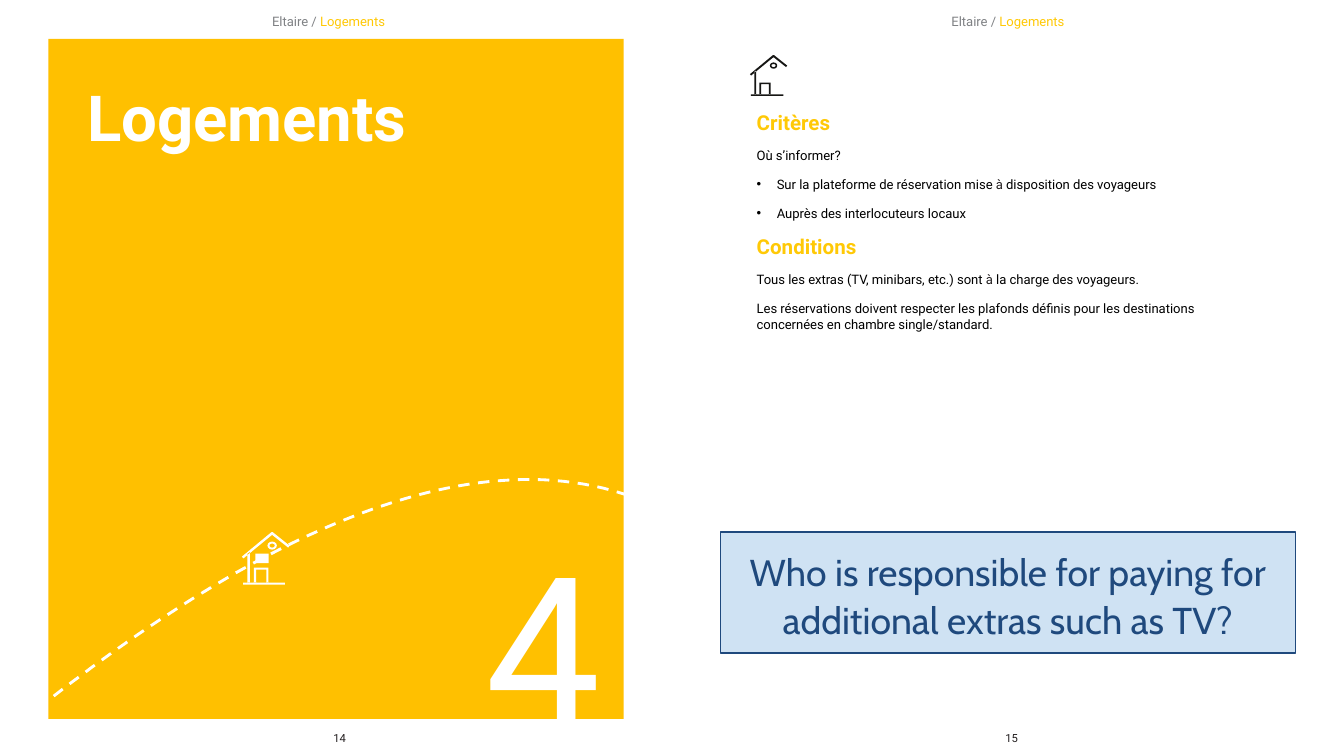
from lxml.etree import SubElement
from pptx import Presentation
from pptx.dml.color import RGBColor
from pptx.enum.dml import MSO_LINE
from pptx.enum.shapes import MSO_SHAPE
from pptx.enum.text import MSO_ANCHOR, MSO_AUTO_SIZE, PP_ALIGN
from pptx.oxml.ns import qn
from pptx.util import Inches, Pt

COLORS = {
    "yellow": "FFC000", "heading": "FFC906", "white": "FFFFFF", "black": "000000",
    "ink": "161614", "dark": "231F20", "gray": "808285", "pale_blue": "CFE2F3", "navy": "1F497D",
}
UNITS = 1000  # freeform units per inch


def write(box, *runs, size, font="Roboto", bold=False, align=PP_ALIGN.LEFT, before=0,
          line_spacing=1.0, margin=0, bullet=None, inset=(0, 0.01, 0, 0)):
    """Append one paragraph made of (text, color name) runs to a box."""
    frame = box.text_frame
    frame.word_wrap = True
    frame.auto_size = MSO_AUTO_SIZE.NONE
    frame.vertical_anchor = MSO_ANCHOR.TOP
    frame.margin_left, frame.margin_top, frame.margin_right, frame.margin_bottom = map(Inches, inset)
    para = frame.paragraphs[0]
    if para.runs:
        para = frame.add_paragraph()
    properties = para._p.get_or_add_pPr()
    properties.set("marL", str(Inches(margin)))
    properties.set("indent", str(-Inches(margin) if bullet else 0))
    if bullet:
        color = SubElement(properties, qn("a:buClr"))
        SubElement(color, qn("a:srgbClr"), val=COLORS["black"])
        SubElement(properties, qn("a:buChar"), char=bullet)
    else:
        SubElement(properties, qn("a:buNone"))
    para.alignment = align
    para.space_before = Pt(before)
    para.line_spacing = line_spacing
    for text, color in runs:
        span = para.add_run()
        span.text = text
        span.font.name = font
        span.font.size = Pt(size)
        span.font.bold = bold
        span.font.color.rgb = RGBColor.from_string(COLORS[color])


def draw_house(shapes, left, top, scale, color):
    """Draw a house icon, 0.36 by 0.39 inches at scale 1."""
    outlines = [
        [(10, 375), (320, 375), (320, 390), (10, 390)],  # ground
        [(42, 160), (60, 145), (60, 380), (42, 380)],  # wall
        [(90, 380), (90, 263), (198, 263), (198, 380), (182, 380), (182, 278), (107, 278), (107, 380)],  # door
        [(0, 182), (220, 0), (230, 0), (355, 100), (345, 115), (225, 20), (12, 195)],  # roof
    ]
    builder = None
    for outline in outlines:
        if builder is None:
            builder = shapes.build_freeform(*outline[0], scale=Inches(scale) / UNITS)
        else:
            builder.move_to(*outline[0])
        builder.add_line_segments(outline[1:], close=True)
    house = builder.convert_to_shape(Inches(left), Inches(top))
    window = shapes.add_shape(
        MSO_SHAPE.DONUT, Inches(left + 0.19 * scale), Inches(top + 0.07 * scale),
        Inches(0.07 * scale), Inches(0.06 * scale))
    for part in (house, window):
        part.shadow.inherit = False
        part.fill.solid()
        part.fill.fore_color.rgb = RGBColor.from_string(COLORS[color])
        part.line.fill.background()


deck = Presentation()
deck.slide_width, deck.slide_height = Inches(10), Inches(10 * 9 / 16)
page = deck.slides.add_slide(deck.slide_layouts[1])
shapes = page.shapes
title, body = shapes.title, page.placeholders[1]

# Chapter cover on the left
panel = shapes.add_shape(MSO_SHAPE.RECTANGLE, Inches(0.36), Inches(0.29), Inches(4.28), Inches(5.06))
panel.shadow.inherit = False
panel.fill.solid()
panel.fill.fore_color.rgb = RGBColor.from_string(COLORS["yellow"])
panel.line.fill.background()
title._element.addprevious(panel._element)

title.left, title.top, title.width, title.height = map(Inches, (0.64, 0.47, 3.25, 0.5))
write(title, ("Logements", "white"), size=34, bold=True, margin=0.01, inset=(0, 0.11, 0, 0))

number = shapes.add_textbox(Inches(3.6), Inches(3.85), Inches(0.88), Inches(1.57))
write(number, ("4", "white"), size=110, margin=0.01)

# Dashed route, sampled from a cubic curve
controls = [(0.4, 5.18), (1.8, 4.1), (3.6, 3.07), (5, 3.83)]
steps = 60
route_points = []
for step in range(steps + 1):
    t = step / steps
    weights = ((1 - t) ** 3, 3 * t * (1 - t) ** 2, 3 * t ** 2 * (1 - t), t ** 3)
    route_points.append(tuple(
        UNITS * sum(weight * point[axis] for weight, point in zip(weights, controls)) for axis in (0, 1)))
builder = shapes.build_freeform(*route_points[0], scale=Inches(1) / UNITS)
builder.add_line_segments(route_points[1:], close=False)
route = builder.convert_to_shape()
route.shadow.inherit = False
route.fill.background()
route.line.color.rgb = RGBColor.from_string(COLORS["white"])
route.line.width = Pt(1.52)
route.line.dash_style = MSO_LINE.DASH

# House icons, with a lit pane on the cover
pane = shapes.add_shape(MSO_SHAPE.RECTANGLE, Inches(1.9), Inches(4.12), Inches(0.1), Inches(0.07))
pane.shadow.inherit = False
pane.fill.solid()
pane.fill.fore_color.rgb = RGBColor.from_string(COLORS["white"])
pane.line.fill.background()
draw_house(shapes, 1.8, 3.96, 1, "white")
draw_house(shapes, 5.58, 0.41, 0.78, "ink")

# Criteria and conditions on the right
body.left, body.top, body.width, body.height = map(Inches, (5.63, 0.81, 3.74, 2.15))
heading = {"size": 11, "bold": True}
plain = {"size": 7, "before": 7}
listed = {**plain, "margin": 0.15, "bullet": "•"}
write(body, ("Critères", "heading"), **heading)
write(body, ("Où s’informer?", "black"), **plain)
write(body, ("Sur la plateforme de réservation mise ", "black"), ("à", "dark"),
      (" disposition des voyageurs", "black"), **listed)
write(body, ("Auprès des interlocuteurs locaux", "black"), **listed)
write(body, ("Conditions", "heading"), before=7, **heading)
write(body, ("Tous les extras (TV, minibars, etc.) sont ", "black"), ("à", "dark"),
      (" la charge des voyageurs.", "black"), **plain)
write(body, ("Les réservations doivent respecter les plafonds définis pour les destinations "
             "concernées en chambre single/standard.", "black"), **plain)

# Running headers and page numbers
for header_left, header_width, number_left, page_number in (
        (1.85, 1.18, 2.47, "14"), (6.96, 1.07, 7.47, "15")):
    header = shapes.add_textbox(Inches(header_left), Inches(0.09), Inches(header_width), Inches(0.21))
    write(header, ("Eltaire / ", "gray"), ("Logements", "heading"), size=7,
          align=PP_ALIGN.CENTER, margin=0.01)
    folio = shapes.add_textbox(Inches(number_left), Inches(5.43), Inches(0.18), Inches(0.09))
    write(folio, (page_number, "dark"), size=6, margin=0.01)

question = shapes.add_shape(MSO_SHAPE.RECTANGLE, Inches(5.36), Inches(3.96), Inches(4.28), Inches(0.9))
question.shadow.inherit = False
question.fill.solid()
question.fill.fore_color.rgb = RGBColor.from_string(COLORS["pale_blue"])
question.line.color.rgb = RGBColor.from_string(COLORS["navy"])
question.line.width = Pt(0.75)
write(question, ("Who is responsible for paying for additional extras such as TV?", "navy"),
      size=20, font="Cabin", align=PP_ALIGN.CENTER, line_spacing=1.08, inset=(0.1, 0.1, 0.1, 0.1))

deck.save("out.pptx")
